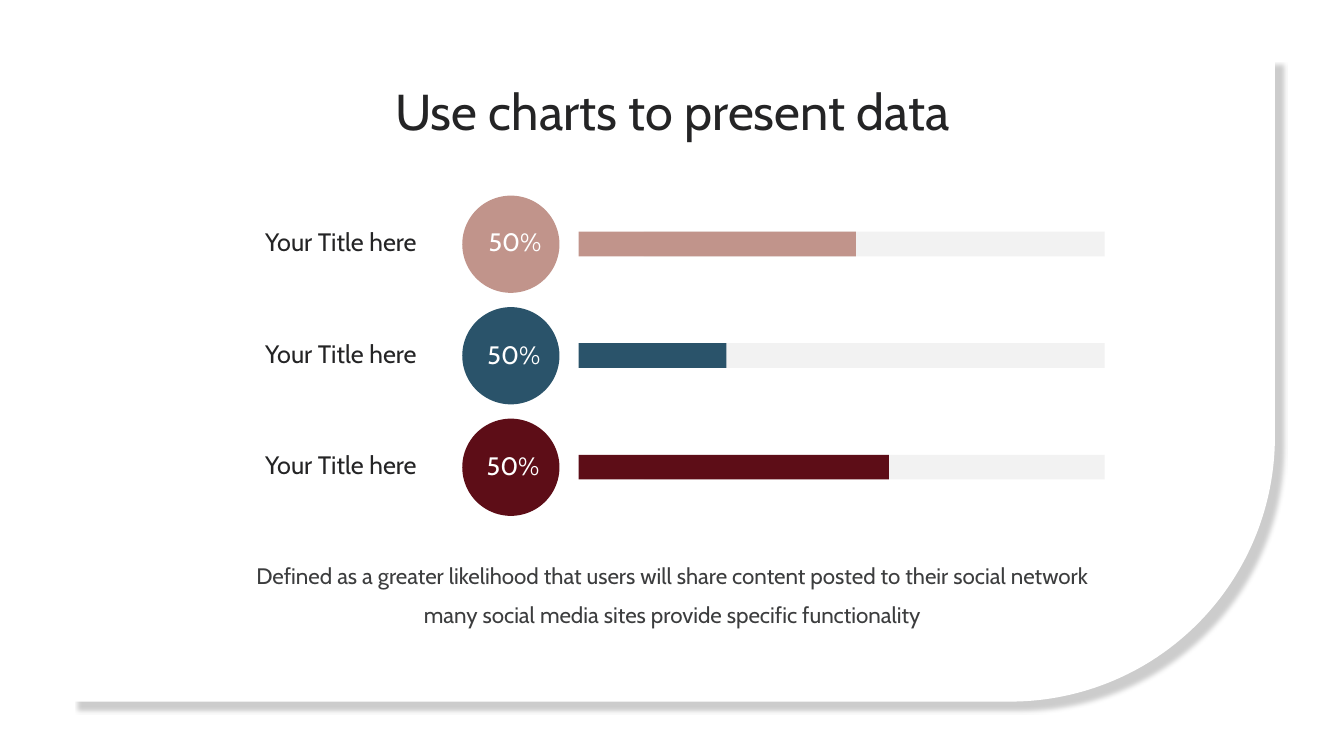
from lxml import etree
from pptx import Presentation
from pptx import util as u
from pptx.dml.color import RGBColor
from pptx.enum import shapes, text
from pptx.oxml import ns

INK = {
    "card": "FFFFFF",
    "track": "F2F2F2",
    "rose": "C1948B",
    "blue": "2A536A",
    "wine": "5D0D17",
    "dark": "242425",
    "body": "3C3D3E",
    "white": "FFFFFF",
}
KIND = shapes.MSO_SHAPE
SIDE = text.PP_ALIGN


def draw(kind, x, y, w, h, ink):
    item = slide.shapes.add_shape(kind, u.Cm(x), u.Cm(y), u.Cm(w), u.Cm(h))
    item.shadow.inherit = False
    item.fill.solid()
    item.fill.fore_color.rgb = RGBColor.from_string(INK[ink])
    item.line.fill.background()
    return item


def write(words, x, y, w, h, size=18, ink="dark", side=SIDE.CENTER, space=None, inset=True):
    box = slide.shapes.add_textbox(u.Cm(x), u.Cm(y), u.Cm(w), u.Cm(h))
    frame = box.text_frame
    frame.word_wrap = True
    frame.auto_size = text.MSO_AUTO_SIZE.SHAPE_TO_FIT_TEXT
    if not inset:
        frame.margin_left = frame.margin_right = 0
        frame.margin_top = frame.margin_bottom = 0
    para = frame.paragraphs[0]
    para.alignment = side
    if space:
        para.line_spacing = space
    run = para.add_run()
    run.text = words
    run.font.size = u.Pt(size)
    run.font.name = "Cabin"
    run.font.color.rgb = RGBColor.from_string(INK[ink])


deck = Presentation()
deck.slide_width = u.Cm(33.87)
deck.slide_height = u.Cm(19.05)
slide = deck.slides.add_slide(deck.slide_layouts[6])

card = draw(KIND.ROUND_2_DIAG_RECTANGLE, 1.73, 1.4, 30.4, 16.28, "card")
card.adjustments[0] = 0.41
card.adjustments[1] = 0
glow = card._element.spPr.find(ns.qn("a:effectLst"))
shade = etree.SubElement(
    glow, ns.qn("a:outerShdw"), blurRad=str(u.Pt(2)), dist=str(u.Pt(10)),
    dir="2700000", algn="tl", rotWithShape="0")
tint = etree.SubElement(shade, ns.qn("a:srgbClr"), val="000000")
etree.SubElement(tint, ns.qn("a:alpha"), val="20000")

STEP = 2.81
rows = [
    ("rose", 6.99, 12.27, 5.54),
    ("blue", 3.73, 12.24, 8.41),
    ("wine", 7.82, 12.22, 11.2),
]
for i, (ink, width, left, top) in enumerate(rows):
    down = i * STEP
    draw(KIND.RECTANGLE, 16.23, 5.84 + down, 11.61, 0.62, "track")
    draw(KIND.RECTANGLE, 14.58, 5.84 + down, width, 0.62, ink)
    draw(KIND.OVAL, 11.65, 4.93 + down, 2.45, 2.45, ink)
    write("Your Title here", 5.62, 5.58 + down, 5.13, 1.02, side=SIDE.RIGHT)
    write("50%", left, top, 1.42, 0.86, ink="white", space=1.2, inset=False)

write("Defined as a greater likelihood that users will share content posted to "
      "their social network many social media sites provide specific functionality",
      6.05, 13.77, 21.79, 2.11, size=16, ink="body", space=u.Pt(27.2))
write("Use charts to present data", 6.05, 2.03, 21.79, 1.55, size=36, inset=False)

deck.save("out.pptx")
